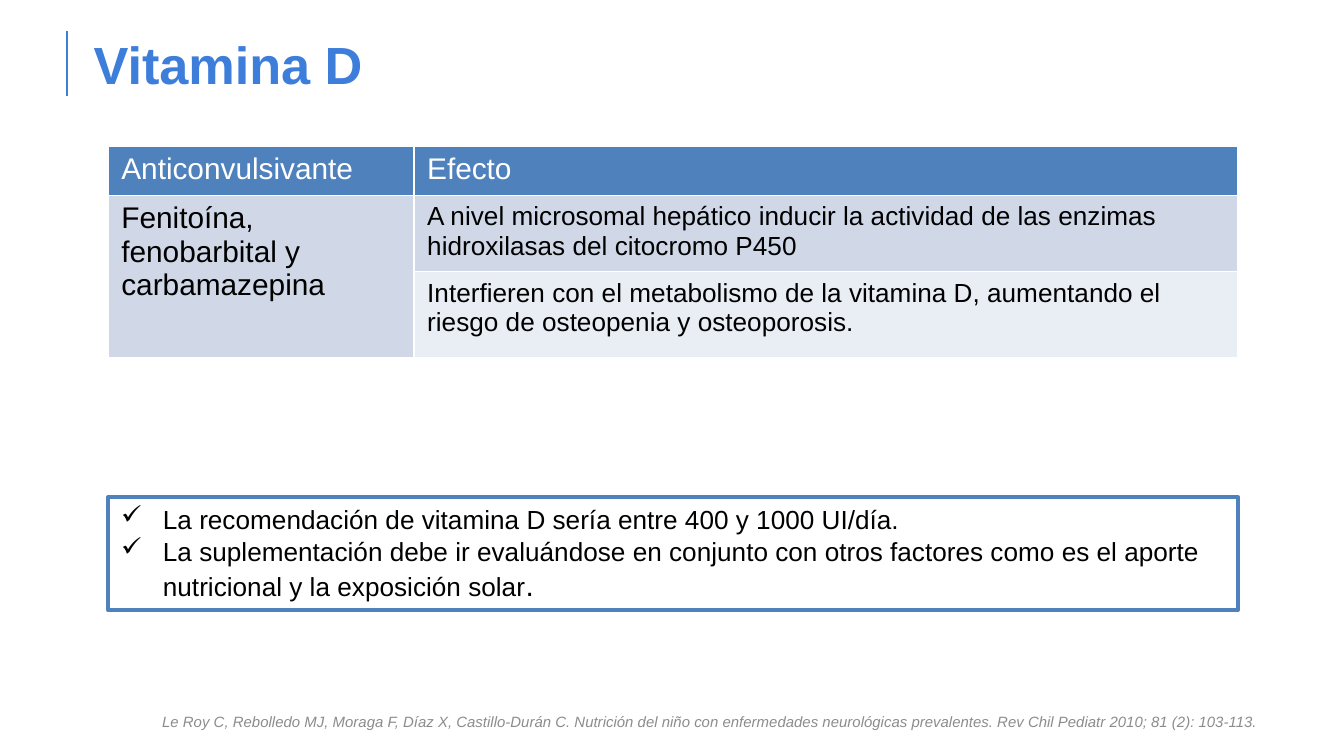
from lxml.etree import SubElement
from pptx import Presentation
from pptx.dml.color import RGBColor
from pptx.enum.shapes import MSO_CONNECTOR, MSO_SHAPE
from pptx.enum.text import MSO_ANCHOR, PP_ALIGN
from pptx.oxml.ns import qn
from pptx.util import Cm, Pt

# Content
TITLE = "Vitamina D"
HEADERS = ["Anticonvulsivante", "Efecto"]
DRUGS = "Fenitoína, fenobarbital y carbamazepina"
EFFECTS = [
    "A nivel microsomal hepático inducir la actividad de las enzimas "
    "hidroxilasas del citocromo P450",
    "Interfieren con el metabolismo de la vitamina D, aumentando el "
    "riesgo de osteopenia y osteoporosis.",
]
# Each recommendation is a list of (text, size) runs
RECOMMENDATIONS = [
    [("La recomendación de vitamina D sería entre 400 y 1000 UI/día.", 14)],
    [("La suplementación debe ir evaluándose en conjunto con otros factores "
      "como es el aporte nutricional y la exposición solar", 14), (".", 16)],
]
REFERENCE = (
    "Le Roy C, Rebolledo MJ, Moraga F, Díaz X, Castillo-Durán C. Nutrición del "
    "niño con enfermedades neurológicas prevalentes. Rev Chil Pediatr 2010; "
    "81 (2): 103-113. "
)

# Style
FONT = "Arial"
TITLE_BLUE = RGBColor(0x3D, 0x7E, 0xDB)
TABLE_BLUE = RGBColor(0x4F, 0x81, 0xBD)
BAND_DARK = RGBColor(0xD0, 0xD8, 0xE8)
BAND_LIGHT = RGBColor(0xE9, 0xED, 0xF4)
GREY = RGBColor(0x8C, 0x8C, 0x8C)
BLACK = RGBColor(0, 0, 0)
WHITE = RGBColor(0xFF, 0xFF, 0xFF)

# Layout
MARGIN, FULL_WIDTH = Cm(1.27), Cm(22.86)
TITLE_TOP, TITLE_HEIGHT = Cm(0.58), Cm(1.24)
BODY_LEFT = Cm(2.04)
COLUMN_WIDTHS = [Cm(5.78), Cm(15.58)]
ROW_HEIGHTS = [Cm(0.88), Cm(1.36), Cm(1.63)]
BODY_WIDTH = sum(COLUMN_WIDTHS)
INDENT = Cm(0.79)


def set_font(paragraph, size, color, bold=False, italic=False):
    font = paragraph.font
    font.name, font.size = FONT, Pt(size)
    font.bold, font.italic = bold, italic
    font.color.rgb = color


def set_insets(frame, left):
    frame.margin_left, frame.margin_right = left, Cm(0.25)
    frame.margin_top = frame.margin_bottom = Cm(0.3)
    frame.vertical_anchor = MSO_ANCHOR.MIDDLE
    frame.word_wrap = True


def fill_cell(cell, text, size, color, background):
    cell.text = text
    set_font(cell.text_frame.paragraphs[0], size, color)
    format_cell(cell, background)


def format_cell(cell, background):
    properties = cell._tc.get_or_add_tcPr()
    for side in ("lnL", "lnR", "lnT", "lnB"):
        border = SubElement(properties, qn(f"a:{side}"), w=str(Pt(1)))
        solid = SubElement(border, qn("a:solidFill"))
        SubElement(solid, qn("a:srgbClr"), val=str(WHITE))
    cell.fill.solid()
    cell.fill.fore_color.rgb = background


def add_check_bullet(paragraph):
    properties = paragraph._p.get_or_add_pPr()
    properties.set("marL", str(INDENT))
    properties.set("indent", str(-INDENT))
    SubElement(properties, qn("a:buChar"), char="✓")


prs = Presentation()
prs.slide_width, prs.slide_height = Cm(25.4), Cm(14.29)
slide = prs.slides.add_slide(prs.slide_layouts[5])
shapes = slide.shapes

# Title with its accent line
accent = shapes.add_connector(MSO_CONNECTOR.STRAIGHT, MARGIN, TITLE_TOP,
                              MARGIN, TITLE_TOP + TITLE_HEIGHT)
accent.line.color.rgb = TITLE_BLUE
accent.line.width = Pt(1)
SubElement(accent._element.spPr, qn("a:effectLst"))

title = shapes.title
title.left, title.top = MARGIN, TITLE_TOP
title.width, title.height = FULL_WIDTH, TITLE_HEIGHT
title.text = TITLE
set_insets(title.text_frame, Cm(0.5))
heading = title.text_frame.paragraphs[0]
heading.alignment = PP_ALIGN.LEFT
set_font(heading, 28, TITLE_BLUE, bold=True)

# Reference
reference = shapes.add_textbox(MARGIN, Cm(13.26), FULL_WIDTH, Cm(0.76))
set_insets(reference.text_frame, Cm(0.25))
citation = reference.text_frame.paragraphs[0]
citation.text = REFERENCE
citation.alignment = PP_ALIGN.RIGHT
set_font(citation, 8, GREY, italic=True)

# Table of effects
effects = shapes.add_table(len(ROW_HEIGHTS), len(COLUMN_WIDTHS), BODY_LEFT,
                           Cm(2.76), BODY_WIDTH, sum(ROW_HEIGHTS)).table
for column, width in zip(effects.columns, COLUMN_WIDTHS):
    column.width = width
for row, height in zip(effects.rows, ROW_HEIGHTS):
    row.height = height

for index, header in enumerate(HEADERS):
    fill_cell(effects.cell(0, index), header, 16, WHITE, TABLE_BLUE)
drugs = effects.cell(1, 0)
drugs.merge(effects.cell(2, 0))
fill_cell(drugs, DRUGS, 16, BLACK, BAND_DARK)
format_cell(effects.cell(2, 0), BAND_DARK)
for index, (effect, band) in enumerate(zip(EFFECTS, (BAND_DARK, BAND_LIGHT)), 1):
    fill_cell(effects.cell(index, 1), effect, 14, BLACK, band)

# Recommendations
advice = shapes.add_shape(MSO_SHAPE.RECTANGLE, BODY_LEFT, Cm(9.4),
                          BODY_WIDTH, Cm(2.13))
advice.shadow.inherit = False
advice.fill.solid()
advice.fill.fore_color.rgb = WHITE
advice.line.color.rgb = TABLE_BLUE
advice.line.width = Pt(2)
frame = advice.text_frame
frame.word_wrap = True
frame.vertical_anchor = MSO_ANCHOR.TOP
for index, runs in enumerate(RECOMMENDATIONS):
    item = frame.add_paragraph() if index else frame.paragraphs[0]
    item.alignment = PP_ALIGN.LEFT
    set_font(item, 14, BLACK)
    add_check_bullet(item)
    for text, size in runs:
        run = item.add_run()
        run.text = text
        run.font.size = Pt(size)

prs.save("out.pptx")
